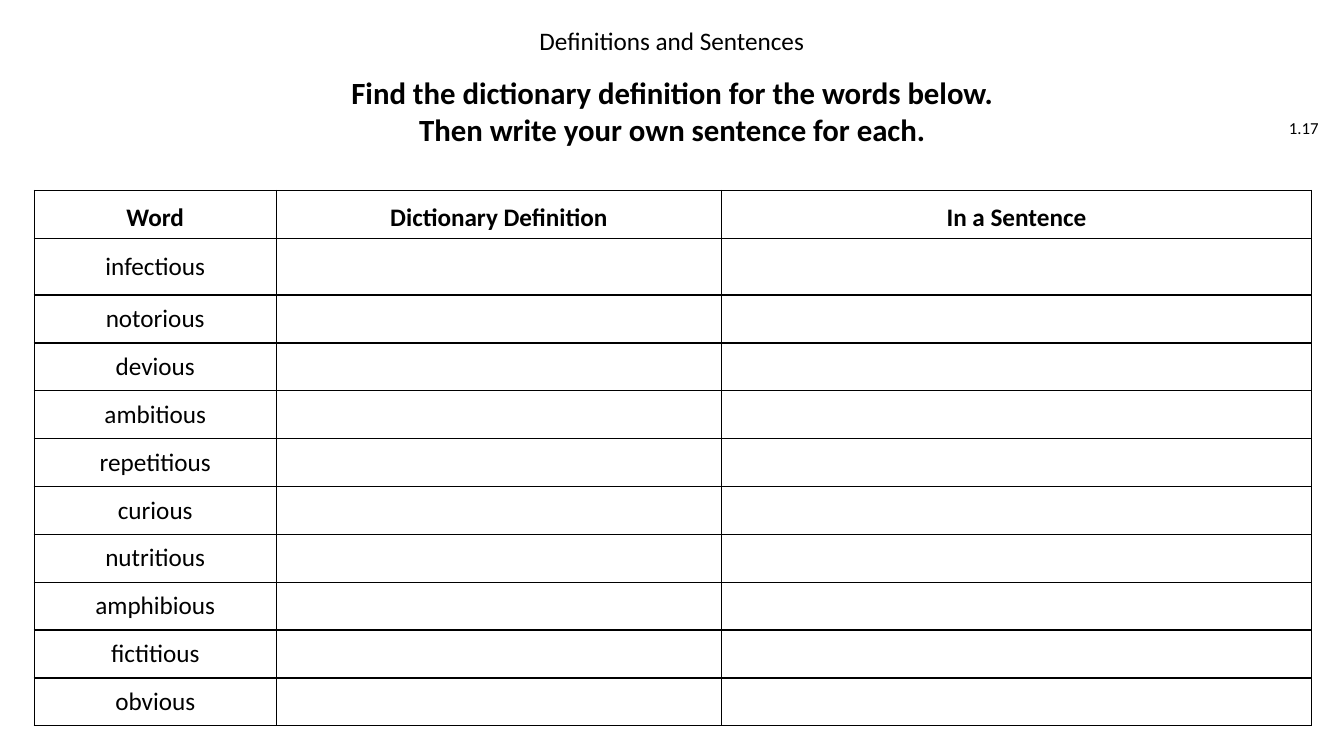
from lxml.etree import SubElement
from pptx import Presentation
from pptx.dml.color import RGBColor
from pptx.enum.text import MSO_ANCHOR as ANCHOR, MSO_AUTO_SIZE as FIT, PP_ALIGN as ALIGN
from pptx.oxml.ns import qn
from pptx.util import Pt

BLACK = RGBColor(0, 0, 0)
WHITE = RGBColor(255, 255, 255)
FONT = "Calibri"
HEADERS = ["Word", "Dictionary Definition", "In a Sentence"]
WORDS = ["infectious", "notorious", "devious", "ambitious", "repetitious",
         "curious", "nutritious", "amphibious", "fictitious", "obvious"]
COL_WIDTHS = [172.8, 318.2, 421.2]
ROW_HEIGHT = 34.2
FIRST_WORD_HEIGHT = 40.5


def write(tf, text, size=18, bold=False, align=ALIGN.CENTER, spacing=(1.0,)):
    tf.text = text
    for p, gap in zip(tf.paragraphs, spacing):
        pPr = p._p.get_or_add_pPr()
        pPr.set("marL", "0")
        pPr.set("indent", "0")
        SubElement(pPr, qn("a:buNone"))
        p.alignment = align
        p.line_spacing = gap
        p.space_before = Pt(0)
        for r in p.runs:
            r.font.name = FONT
            r.font.size = Pt(size)
            r.font.bold = bold
            r.font.color.rgb = BLACK


def place(sp, x, y, w, h, anchor):
    sp.left, sp.top, sp.width, sp.height = Pt(x), Pt(y), Pt(w), Pt(h)
    tf = sp.text_frame
    tf.word_wrap = True
    tf.auto_size = FIT.NONE
    tf.vertical_anchor = anchor
    return tf


def add_heading(s, x, y, w, h):
    title, body = s.placeholders
    write(place(title, x + 133.2, y, w - 267.1, 25.2, ANCHOR.TOP),
          "Definitions and Sentences", spacing=(0.9,))
    write(place(body, x, y + 26.6, w, h - 26.6, ANCHOR.MIDDLE),
          "Find the dictionary definition for the words below.\n"
          "Then write your own sentence for each.",
          size=22, bold=True, spacing=(1.5, 1.0))


def add_number(s, x, y, w, h):
    sp = s.shapes.add_textbox(Pt(x), Pt(y), Pt(w), Pt(h))
    write(place(sp, x, y, w, h, ANCHOR.MIDDLE), "1.17", size=12, align=ALIGN.RIGHT)


def add_borders(cell):
    tcPr = cell._tc.get_or_add_tcPr()
    for side in ("lnL", "lnR", "lnT", "lnB"):
        ln = SubElement(tcPr, qn(f"a:{side}"), w=str(Pt(1)))
        fill = SubElement(ln, qn("a:solidFill"))
        SubElement(fill, qn("a:srgbClr"), val=str(BLACK))


def add_word_table(s, x, y):
    rows = [HEADERS] + [[word, "", ""] for word in WORDS]
    heights = [ROW_HEIGHT, FIRST_WORD_HEIGHT] + [ROW_HEIGHT] * (len(WORDS) - 1)
    table = s.shapes.add_table(len(rows), len(HEADERS), Pt(x), Pt(y),
                               Pt(sum(COL_WIDTHS)), Pt(sum(heights))).table
    table.first_row = table.horz_banding = False
    for col, width in zip(table.columns, COL_WIDTHS):
        col.width = Pt(width)
    for i, (texts, height) in enumerate(zip(rows, heights)):
        table.rows[i].height = Pt(height)
        for j, text in enumerate(texts):
            cell = table.cell(i, j)
            add_borders(cell)
            cell.fill.solid()
            cell.fill.fore_color.rgb = WHITE
            cell.vertical_anchor = ANCHOR.MIDDLE if i else ANCHOR.BOTTOM
            cell.margin_left = cell.margin_right = Pt(7.9)
            write(cell.text_frame, text, bold=i == 0)


def main():
    prs = Presentation()
    prs.slide_width, prs.slide_height = Pt(960), Pt(540)
    s = prs.slides.add_slide(prs.slide_layouts[1])
    add_heading(s, 141.8, 16.6, 676.8, 85.7)
    add_number(s, 903.6, 77, 45.4, 28.8)
    add_word_table(s, 24.5, 136.1)
    prs.save("out.pptx")


if __name__ == "__main__":
    main()
